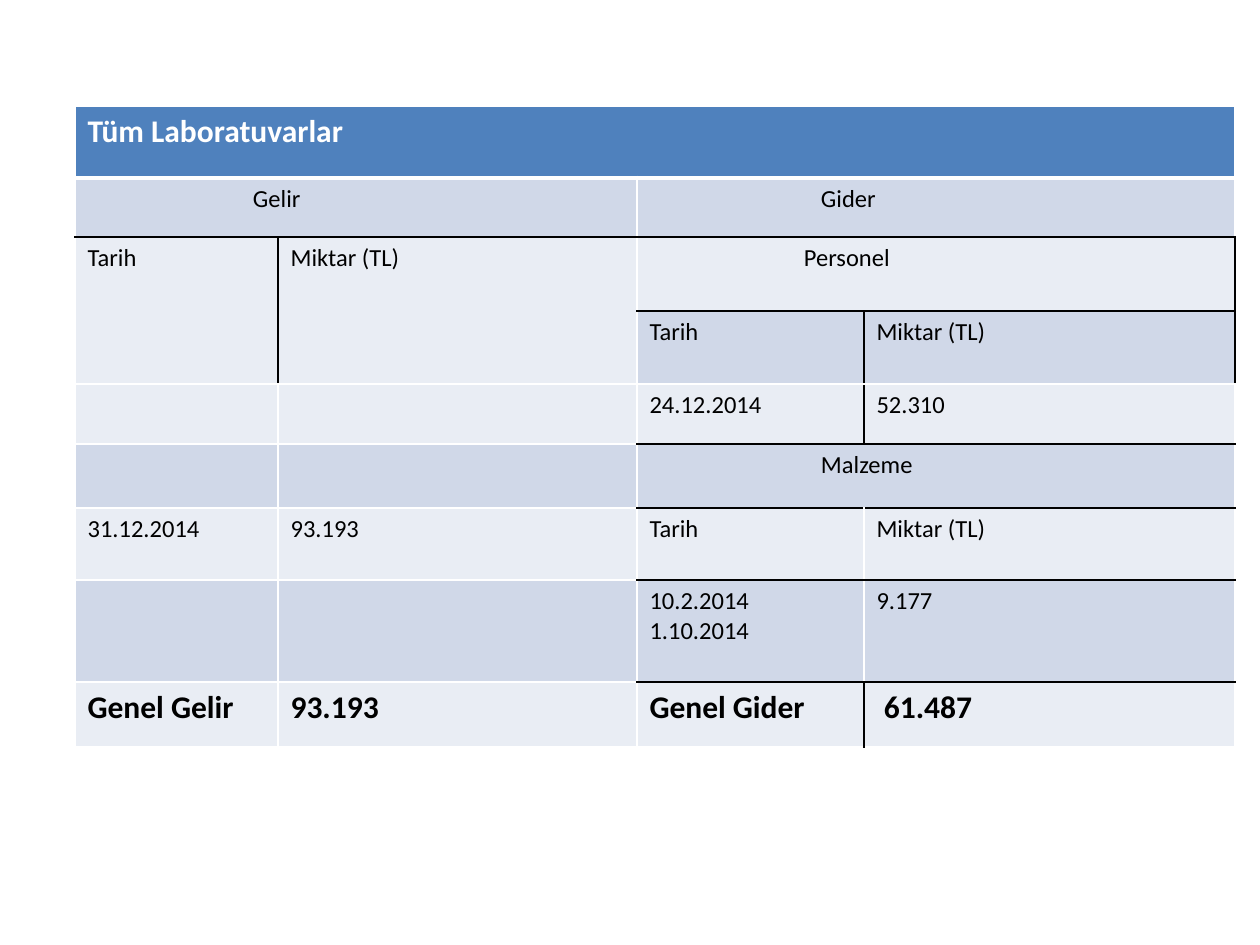
import pptx
import pptx.util
import pptx.dml.color
import pptx.oxml
import pptx.oxml.ns


def px(n):
    return pptx.util.Emu(round(n * 914400 / 126))


def edge(cell, side, tint, width):
    cell._tc.get_or_add_tcPr().append(pptx.oxml.parse_xml(
        f'<a:{side} {pptx.oxml.ns.nsdecls("a")} w="{width * 12700}">'
        f'<a:solidFill><a:srgbClr val="{tint}"/></a:solidFill></a:{side}>'))


hues = {"head": "4F81BD", "dark": "D0D8E8", "light": "E9EDF4",
        "white": "FFFFFF", "black": "000000"}
cols = [203, 359, 227, 371]
rows = [72, 59, 74, 73, 60, 64, 72, 102, 65]

# Wording by row and column
texts = [
    ["Tüm Laboratuvarlar", "", "", ""],
    ["Gelir", "", "Gider", ""],
    ["Tarih", "Miktar (TL)", "Personel", ""],
    ["", "", "Tarih", "Miktar (TL)"],
    ["", "", "24.12.2014", "52.310"],
    ["", "", "Malzeme", ""],
    ["31.12.2014", "93.193", "Tarih", "Miktar (TL)"],
    ["", "", "10.2.2014\n1.10.2014", "9.177"],
    ["Genel Gelir", "93.193", "Genel Gider", "61.487"],
]
# Merged blocks: first and last cell
spans = [((0, 0), (0, 3)), ((1, 0), (1, 1)), ((1, 2), (1, 3)),
         ((2, 0), (3, 0)), ((2, 1), (3, 1)), ((2, 2), (2, 3)),
         ((5, 2), (5, 3))]
# Left insets of the shifted texts
insets = {(1, 0): 178, (1, 2): 184, (2, 2): 167, (5, 2): 184, (8, 3): 20}
# Black rules: row edge -> columns, column edge -> rows
across = {2: [0, 1, 2, 3], **{e: [2, 3] for e in (3, 5, 6, 7, 8)}}
down = {1: [2, 3], 3: [3, 4, 8], 4: [2, 3]}

# Slide
deck = pptx.Presentation()
deck.slide_width, deck.slide_height = px(1260), px(945)
slide = deck.slides.add_slide(deck.slide_layouts[6])

# Table grid
frame = slide.shapes.add_table(len(rows), len(cols), px(75), px(106),
                               px(sum(cols)), px(sum(rows)))
table = frame.table
table.first_row = table.horz_banding = False
for col, width in zip(table.columns, cols):
    col.width = px(width)
for row, height in zip(table.rows, rows):
    row.height = px(height)
for first, last in spans:
    table.cell(*first).merge(table.cell(*last))

# Cells
for r, line in enumerate(texts):
    for c, text in enumerate(line):
        cell = table.cell(r, c)
        right, low = c + 1, r + 1
        if cell.is_merge_origin:
            right, low = c + cell.span_width, r + cell.span_height

        # Borders
        for side, dark, at in (("lnL", r in down.get(c, []), 0),
                               ("lnR", r in down.get(right, []), 0),
                               ("lnT", c in across.get(r, []), r),
                               ("lnB", c in across.get(low, []), low)):
            edge(cell, side, hues["black" if dark else "white"],
                 3 if at == 1 else 1)

        # Fill
        band = "head" if r == 0 else "dark" if r % 2 else "light"
        cell.fill.solid()
        cell.fill.fore_color.rgb = pptx.dml.color.RGBColor.from_string(hues[band])

        # Text
        if not text:
            continue
        if (r, c) in insets:
            cell.margin_left = px(insets[r, c])
        cell.text = text
        big = r in (0, 8)
        for para in cell.text_frame.paragraphs:
            para.font.name = "Calibri"
            para.font.size = pptx.util.Pt(18 if big else 14)
            para.font.bold = big
            para.font.color.rgb = pptx.dml.color.RGBColor.from_string(
                hues["black" if r else "white"])

deck.save("out.pptx")
